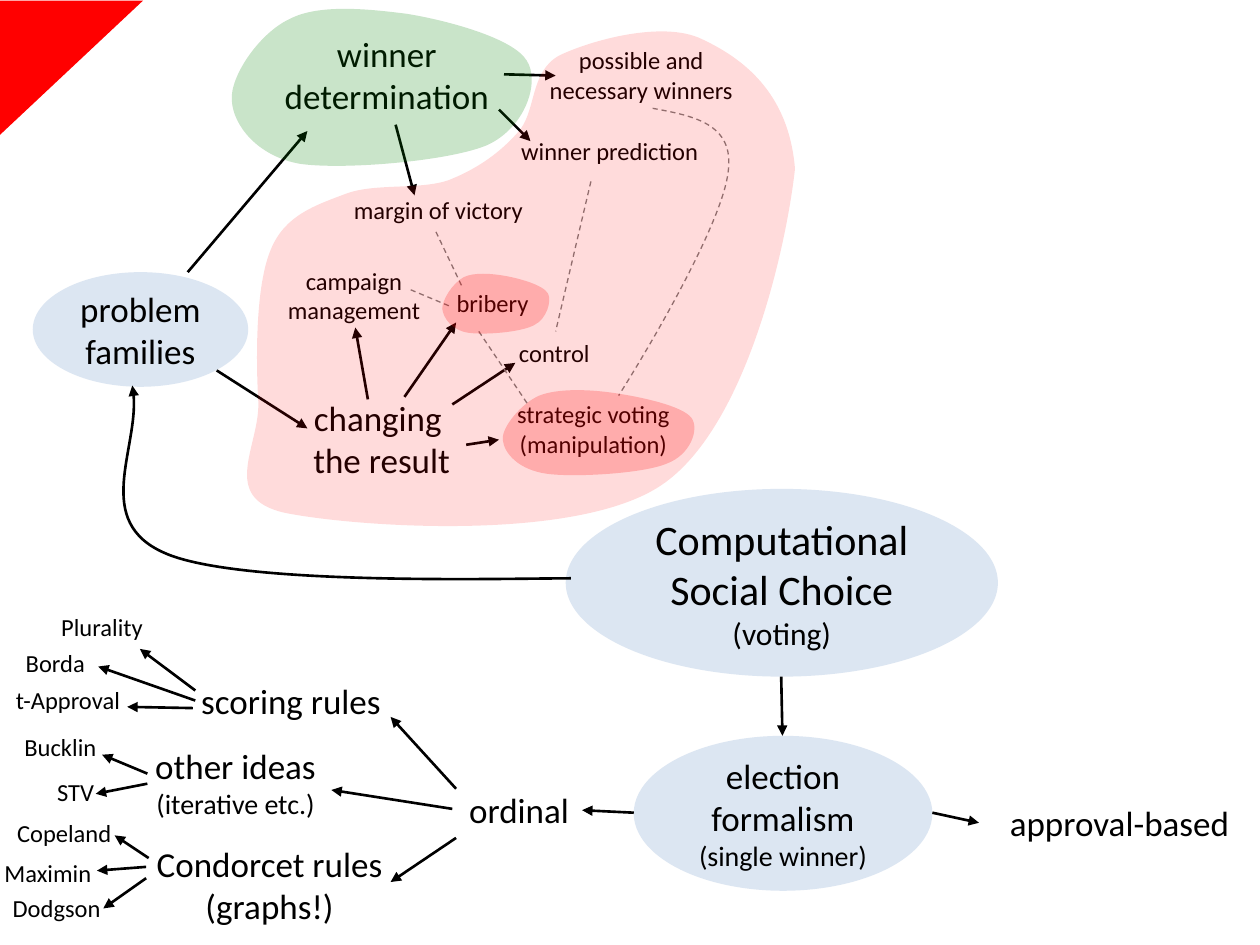
from math import cos, radians, sin

from lxml.etree import SubElement
from pptx import Presentation
from pptx.dml.color import RGBColor
from pptx.enum.dml import MSO_LINE
from pptx.enum.shapes import MSO_CONNECTOR, MSO_SHAPE
from pptx.enum.text import MSO_ANCHOR, MSO_AUTO_SIZE, PP_ALIGN
from pptx.oxml.ns import qn
from pptx.util import Inches, Pt

COLORS = {name: RGBColor.from_string(value) for name, value in {
    "corner": "FF0000", "topic": "DCE6F2", "ink": "000000",
    "link": "808080", "solved": "008000", "hard": "FF0000"}.items()}

deck = Presentation()
deck.slide_width, deck.slide_height = Inches(10), Inches(7.5)
page = deck.slides.add_slide(deck.slide_layouts[6])


def write(shape, lines):
    """Fill a shape with centred paragraphs: a text, then a size for each of its runs."""
    frame = shape.text_frame
    frame.word_wrap = True
    for index, (text, *sizes) in enumerate(lines):
        para = frame.add_paragraph() if index else frame.paragraphs[0]
        para.text = text
        para.alignment = PP_ALIGN.CENTER
        for span, size in zip(para.runs, sizes):
            span.font.name, span.font.size = "Calibri", Pt(size)
            span.font.color.rgb = COLORS["ink"]


def style_line(shape, dashed):
    """Draw a thin dashed link, or a solid line ending in an arrowhead."""
    shape.line.color.rgb = COLORS["link" if dashed else "ink"]
    shape.line.width = Pt(0.75 if dashed else 1.5)
    if dashed:
        shape.line.dash_style = MSO_LINE.DASH
    else:
        SubElement(shape.line._get_or_add_ln(), qn("a:tailEnd"), type="triangle")


corner = page.shapes.add_shape(MSO_SHAPE.RIGHT_TRIANGLE, Inches(0.03), Inches(-0.03),
                               Inches(1.07), Inches(1.14))
corner.rotation = 90
corner.shadow.inherit = False
corner.fill.solid()
corner.fill.fore_color.rgb = COLORS["corner"]
corner.line.fill.background()

topics = [
    (4.49, 3.88, 3.43, 1.49, [("Computational Social Choice", 24), ("(voting)", 18)]),
    (5.03, 5.84, 2.37, 1.23, [("election formalism", 20), ("(single winner)", 16)]),
    (0.26, 2.16, 1.71, 0.91, [("problem families", 20)]),
]
for left, top, width, height, lines in topics:
    topic = page.shapes.add_shape(MSO_SHAPE.OVAL, Inches(left), Inches(top),
                                  Inches(width), Inches(height))
    topic.shadow.inherit = False
    topic.fill.solid()
    topic.fill.fore_color.rgb = COLORS["topic"]
    topic.line.fill.background()
    topic.text_frame.vertical_anchor = MSO_ANCHOR.MIDDLE
    write(topic, lines)

branches = [
    (7.77, 6.31, 2.23, 0.44, [("approval-based", 20)]),
    (3.62, 6.21, 1, 0.44, [("ordinal", 20)]),
    (1.43, 5.34, 1.76, 0.44, [("scoring rules", 20)]),
    (1.06, 6.64, 2.16, 0.77, [("Condorcet rules\v(graphs!)", 20, 20)]),
    (0.99, 5.86, 1.76, 0.71, [("other ideas\v(iterative etc.)", 20, 16)]),
    (2.14, 0.21, 1.86, 0.77, [("winner determination", 20)]),
    (2.1, 3.1, 1.86, 0.77, [("changing \vthe result", 20, 20)]),
]
one_line_leaves = [
    (-0.07, 4.81, "Plurality"), (-0.44, 5.09, "Borda"), (-0.34, 5.39, "t-Approval"),
    (-0.4, 5.76, "Bucklin"), (-0.28, 6.12, "STV"),
    (-0.37, 6.44, "Copeland"), (-0.5, 6.76, "Maximin"), (-0.43, 7.04, "Dodgson"),
    (2.6, 1.5, "margin of victory"), (3.52, 2.63, "control"),
    (3.03, 2.24, "bribery"), (3.96, 1.03, "winner prediction"),
]
two_line_leaves = [
    (3.83, 3.12, "strategic voting (manipulation)"),
    (4.21, 0.31, "possible and necessary winners"),
    (1.93, 2.06, "campaign management"),
]
labels = branches
for leaves, leaf_height in ((one_line_leaves, 0.34), (two_line_leaves, 0.57)):
    labels += [(left, top, 1.76, leaf_height, [(text, 14)]) for left, top, text in leaves]
for left, top, width, height, lines in labels:
    label = page.shapes.add_textbox(Inches(left), Inches(top), Inches(width), Inches(height))
    write(label, lines)
    label.text_frame.auto_size = MSO_AUTO_SIZE.SHAPE_TO_FIT_TEXT

arrows = [
    # Computational Social Choice, election formalism, ordinal
    (6.2, 5.37, 6.21, 5.84), (7.4, 6.45, 7.77, 6.53), (5.03, 6.45, 4.62, 6.43),
    (3.62, 6.65, 3.1, 7), (3.59, 6.42, 2.63, 6.27), (3.62, 6.26, 3.1, 5.69),
    # scoring rules, other ideas, Condorcet rules
    (1.55, 5.48, 1.11, 5.15), (1.55, 5.56, 0.78, 5.29), (1.53, 5.62, 1.01, 5.61),
    (1.17, 6.14, 0.81, 5.99), (1.17, 6.22, 0.76, 6.3),
    (1.18, 6.81, 0.91, 6.63), (1.16, 6.88, 0.77, 6.91), (1.16, 6.97, 0.82, 7.21),
    # problem families
    (1.72, 2.94, 2.44, 3.4), (1.49, 2.16, 2.44, 1.04),
    # changing the result
    (3.7, 3.53, 3.96, 3.49), (3.59, 3.21, 4.09, 2.88),
    (3.21, 3.15, 3.62, 2.56), (2.92, 3.17, 2.82, 2.6),
    # winner determination
    (3.14, 0.99, 3.29, 1.55), (3.96, 0.87, 4.21, 1.12), (4, 0.59, 4.41, 0.6),
]
links = [(3.46, 1.84, 3.67, 2.28), (4.69, 1.44, 4.41, 2.63),
         (3.26, 2.3, 3.57, 2.43), (3.8, 2.63, 4.19, 3.21)]
for ends, dashed in [(ends, False) for ends in arrows] + [(ends, True) for ends in links]:
    line = page.shapes.add_connector(MSO_CONNECTOR.STRAIGHT, *map(Inches, ends))
    style_line(line, dashed)
    SubElement(line._element.spPr, qn("a:effectLst"))

# Each curve has a frame, a turn in degrees, and on the page a start point followed
# by Bézier triples: two handles and an end point.
# A colour and an opacity in percent make it a tinted zone; otherwise it is a line.
curves = [
    (None, False, (0.99, 2.89, 3.45, 1.89), 173.8,
     [(4.53, 4.59), (4, 4.59), (1.9, 4.65), (1.31, 4.39),
      (0.73, 4.14), (1.14, 3.5), (1.05, 3.06)]),
    (None, True, (4.91, 0.86, 0.88, 2.27), 0,
     [(5.18, 0.86), (5.5, 0.92), (5.83, 0.98), (5.78, 1.36),
      (5.74, 1.74), (5.22, 2.65), (4.91, 3.14)]),
    ("solved", 21, (1.84, 0.07, 2.38, 1.25), 0,
     [(2.3, 0.15), (2.06, 0.26), (1.82, 0.61), (1.84, 0.8),
      (1.85, 0.99), (2.04, 1.24), (2.38, 1.3), (2.72, 1.35), (3.57, 1.28), (3.87, 1.15),
      (4.17, 1.01), (4.29, 0.65), (4.18, 0.48), (4.07, 0.3), (3.54, 0.16), (3.23, 0.11),
      (2.92, 0.07), (2.53, 0.03), (2.3, 0.15)]),
    ("hard", 14, (1.96, 0.25, 4.35, 3.92), 0,
     [(5.57, 0.31), (5.26, 0.16), (4.69, 0.32), (4.44, 0.44),
      (4.2, 0.57), (4.26, 0.89), (4.11, 1.05), (3.97, 1.21), (3.79, 1.34), (3.56, 1.43),
      (3.33, 1.51), (2.97, 1.45), (2.74, 1.54), (2.5, 1.63), (2.26, 1.71), (2.15, 1.98),
      (2.03, 2.26), (2.03, 2.83), (2.05, 3.18), (2.07, 3.53), (1.73, 3.95), (2.26, 4.07),
      (2.8, 4.18), (4.57, 4.31), (5.25, 3.85), (5.92, 3.4), (6.24, 1.97), (6.31, 1.34),
      (6.26, 0.73), (5.89, 0.46), (5.57, 0.31)]),
    ("hard", 21, (3.99, 3.1, 1.52, 0.68), 0,
     [(4.28, 3.14), (4.14, 3.2), (3.98, 3.39), (3.99, 3.49),
      (4, 3.6), (4.12, 3.73), (4.34, 3.76), (4.55, 3.79), (5.1, 3.76), (5.29, 3.68),
      (5.48, 3.61), (5.55, 3.41), (5.49, 3.32), (5.42, 3.22), (5.08, 3.15), (4.88, 3.12),
      (4.68, 3.09), (4.43, 3.08), (4.28, 3.14)]),
    ("hard", 21, (3.51, 2.17, 0.85, 0.48), 0,
     [(3.68, 2.2), (3.59, 2.25), (3.51, 2.38), (3.51, 2.45),
      (3.52, 2.53), (3.59, 2.62), (3.71, 2.64), (3.83, 2.66), (4.13, 2.64), (4.24, 2.58),
      (4.34, 2.53), (4.38, 2.39), (4.35, 2.33), (4.31, 2.26), (4.12, 2.21), (4.01, 2.19),
      (3.9, 2.17), (3.76, 2.16), (3.68, 2.2)]),
]
for color, style, (left, top, width, height), turn, points in curves:
    builder = page.shapes.build_freeform(Inches(left), Inches(top))
    builder.add_line_segments([(Inches(left + width), Inches(top + height))], close=False)
    curve = builder.convert_to_shape()
    curve.rotation = turn
    curve.shadow.inherit = False

    # Turn the points back into the frame and write them as cubic segments
    cosine, sine = cos(radians(turn)), sin(radians(turn))
    outline = next(curve._element.iter(qn("a:path")))
    for child in list(outline):
        outline.remove(child)
    for index, (x, y) in enumerate(points):
        if index % 3 == 1 or index == 0:
            segment = SubElement(outline, qn("a:cubicBezTo" if index else "a:moveTo"))
        across, down = x - left - width / 2, y - top - height / 2
        SubElement(segment, qn("a:pt"),
                   x=str(Inches(width / 2 + across * cosine + down * sine)),
                   y=str(Inches(height / 2 - across * sine + down * cosine)))
    if color:
        SubElement(outline, qn("a:close"))
        curve.fill.solid()
        curve.fill.fore_color.rgb = COLORS[color]
        tint = curve._element.spPr.find(qn("a:solidFill"))[0]
        SubElement(tint, qn("a:alpha"), val=str(style * 1000))
        curve.line.fill.background()
    else:
        curve.fill.background()
        style_line(curve, style)

deck.save("out.pptx")
